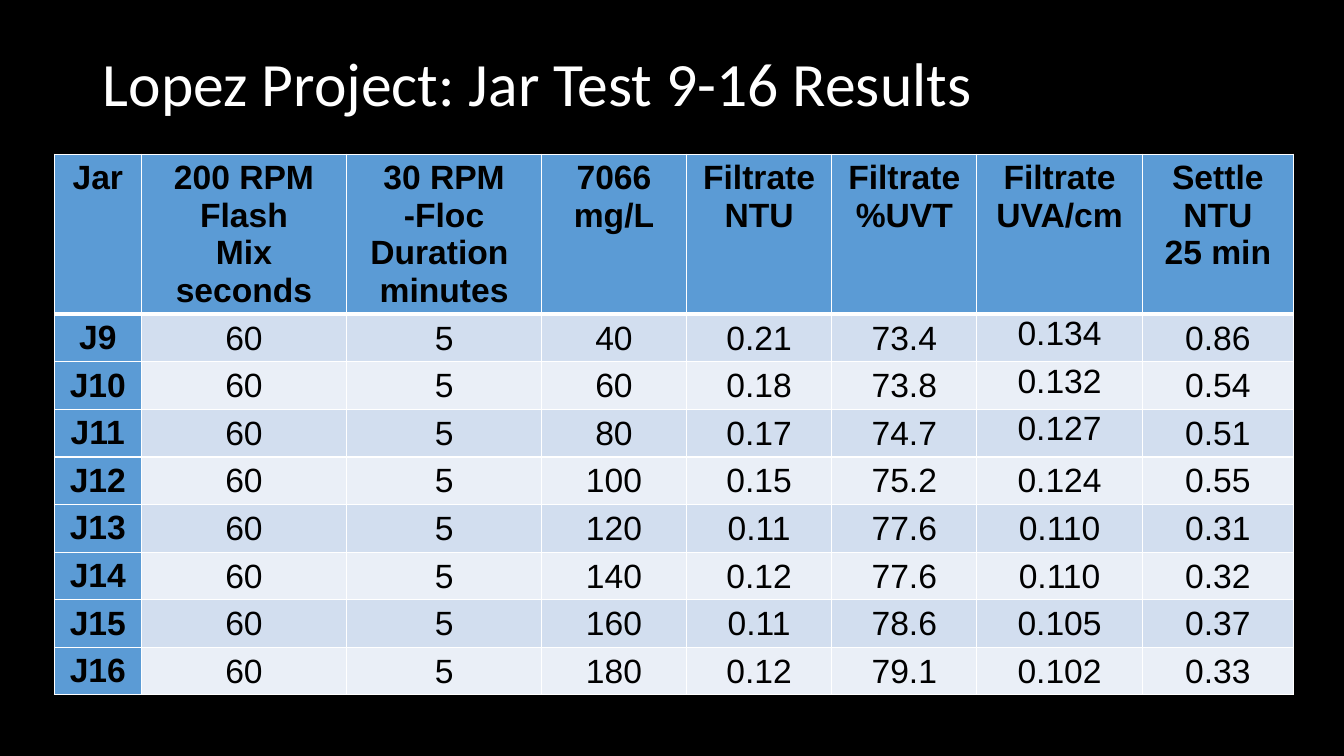
from dataclasses import dataclass

from lxml import etree
from pptx import Presentation
from pptx.dml.color import RGBColor
from pptx.enum.text import MSO_ANCHOR, MSO_AUTO_SIZE, PP_ALIGN
from pptx.oxml.ns import qn
from pptx.util import Inches, Pt

LEFT, CENTER = PP_ALIGN.LEFT, PP_ALIGN.CENTER
TOP, MIDDLE = MSO_ANCHOR.TOP, MSO_ANCHOR.MIDDLE
NO_FIT = MSO_AUTO_SIZE.NONE
TITLE_ONLY = 5

COLORS = {
    "background": "000000",
    "title": "FFFFFF",
    "text": "000000",
    "border": "FFFFFF",
    "header": "5B9BD5",
    "odd": "D2DEEF",
    "even": "EAEFF7",
}
TITLE_FONT = {"name": "Calibri", "size": Pt(44), "bold": False}
HEAD_FONT = {"name": "Arial", "size": Pt(24), "bold": True}
BODY_FONT = {**HEAD_FONT, "bold": False}
BODY_MARGINS = {
    "margin_left": Inches(0.01),
    "margin_top": Inches(0.01),
    "margin_right": Inches(0.01),
    "margin_bottom": Inches(0),
}
ROW_HEIGHT = 0.41
FLASH_MIX, FLOC = "60", "5"
UVA_COLUMN, LAST_TOP_ROW = 6, 3


@dataclass
class Column:
    heading: str
    width: float


@dataclass
class Jar:
    name: str
    dose: str
    ntu: str
    uvt: str
    uva: str
    settled: str

    def values(self) -> list[str]:
        return [self.name, FLASH_MIX, FLOC, self.dose,
                self.ntu, self.uvt, self.uva, self.settled]


COLUMNS = [
    Column("Jar", 0.86),
    Column("200 RPM\nFlash\nMix\nseconds", 2.04),
    Column("30 RPM\n-Floc\nDuration \nminutes", 1.93),
    Column("7066\nmg/L", 1.44),
    Column("Filtrate\nNTU", 1.44),
    Column("Filtrate\n%UVT", 1.44),
    Column("Filtrate\nUVA/cm", 1.64),
    Column("Settle\nNTU\n25 min", 1.5),
]
JARS = [
    Jar("J9", "40", "0.21", "73.4", "0.134", "0.86"),
    Jar("J10", "60", "0.18", "73.8", "0.132", "0.54"),
    Jar("J11", "80", "0.17", "74.7", "0.127", "0.51"),
    Jar("J12", "100", "0.15", "75.2", "0.124", "0.55"),
    Jar("J13", "120", "0.11", "77.6", "0.110", "0.31"),
    Jar("J14", "140", "0.12", "77.6", "0.110", "0.32"),
    Jar("J15", "160", "0.11", "78.6", "0.105", "0.37"),
    Jar("J16", "180", "0.12", "79.1", "0.102", "0.33"),
]


def rgb(name: str) -> RGBColor:
    return RGBColor.from_string(COLORS[name])


def set_attrs(obj, values: dict) -> None:
    for name, value in values.items():
        setattr(obj, name, value)


def format_text(tf, font: dict, color: str, align) -> None:
    for p in tf.paragraphs:
        p.alignment = align
        for r in p.runs:
            set_attrs(r.font, font)
            r.font.color.rgb = rgb(color)


def set_borders(cell, row: int) -> None:
    """Draw thin lines, with a thick one under the header row."""
    widths = {"lnL": 1, "lnR": 1,
              "lnT": 3 if row == 1 else 1,
              "lnB": 3 if row == 0 else 1}
    tc_pr = cell._tc.get_or_add_tcPr()
    for i, (tag, width) in enumerate(widths.items()):
        ln = etree.Element(qn(f"a:{tag}"), w=str(Pt(width)))
        fill = etree.SubElement(ln, qn("a:solidFill"))
        etree.SubElement(fill, qn("a:srgbClr"), val=COLORS["border"])
        tc_pr.insert(i, ln)


def fill_cell(cell, row: int, col: int, text: str) -> None:
    is_head = row == 0 or col == 0
    cell.text = text
    cell.fill.solid()
    band = "odd" if row % 2 else "even"
    cell.fill.fore_color.rgb = rgb("header" if is_head else band)
    if not is_head:
        set_attrs(cell, BODY_MARGINS)
        at_top = col == UVA_COLUMN and row <= LAST_TOP_ROW
        cell.vertical_anchor = TOP if at_top else MIDDLE
    format_text(cell.text_frame, HEAD_FONT if is_head else BODY_FONT, "text", CENTER)
    set_borders(cell, row)


def add_title(s, text: str) -> None:
    title = s.shapes.title
    set_attrs(title, {"left": Inches(0.92), "top": Inches(0.13),
                      "width": Inches(11.5), "height": Inches(1.45)})
    tf = title.text_frame
    tf.text = text
    set_attrs(tf, {"word_wrap": True, "auto_size": NO_FIT, "vertical_anchor": MIDDLE})
    tf.paragraphs[0].line_spacing = 0.9
    format_text(tf, TITLE_FONT, "title", LEFT)


def add_results(s) -> None:
    rows = [[c.heading for c in COLUMNS]] + [jar.values() for jar in JARS]
    frame = s.shapes.add_table(len(rows), len(COLUMNS), Inches(0.54), Inches(1.53),
                               Inches(12.29), Inches(5.7))
    table = frame.table
    table.first_col = True
    for col, column in zip(table.columns, COLUMNS):
        col.width = Inches(column.width)
    for i, values in enumerate(rows):
        table.rows[i].height = Inches(ROW_HEIGHT)
        for j, text in enumerate(values):
            fill_cell(table.cell(i, j), i, j, text)
    frame.height = Inches(5.7)


def main() -> None:
    prs = Presentation()
    prs.slide_width, prs.slide_height = Inches(13.33), Inches(7.5)
    s = prs.slides.add_slide(prs.slide_layouts[TITLE_ONLY])

    # Background
    s.background.fill.solid()
    s.background.fill.fore_color.rgb = rgb("background")

    # Title and results table
    add_title(s, "Lopez Project: Jar Test 9-16 Results")
    add_results(s)
    prs.save("out.pptx")


if __name__ == "__main__":
    main()
